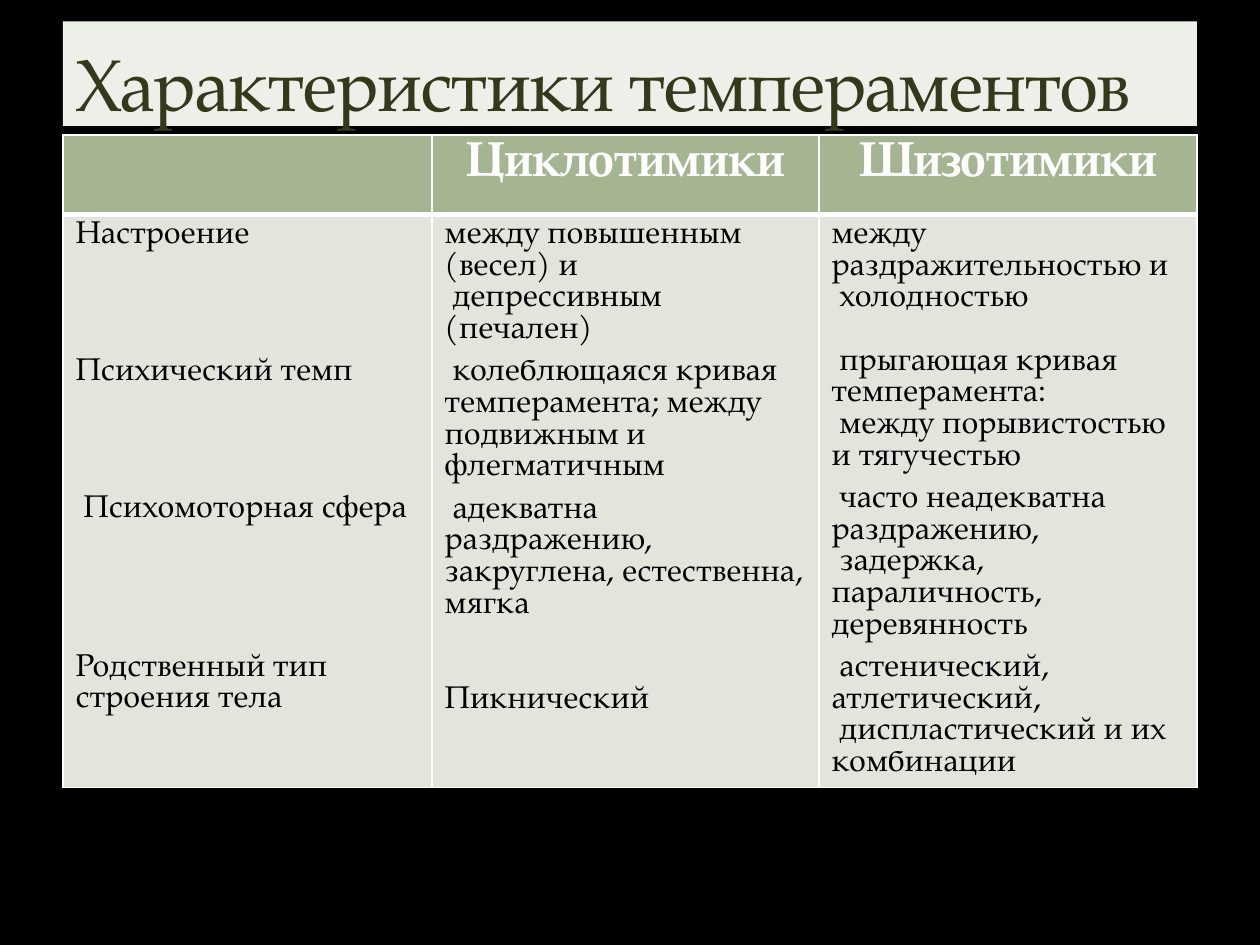
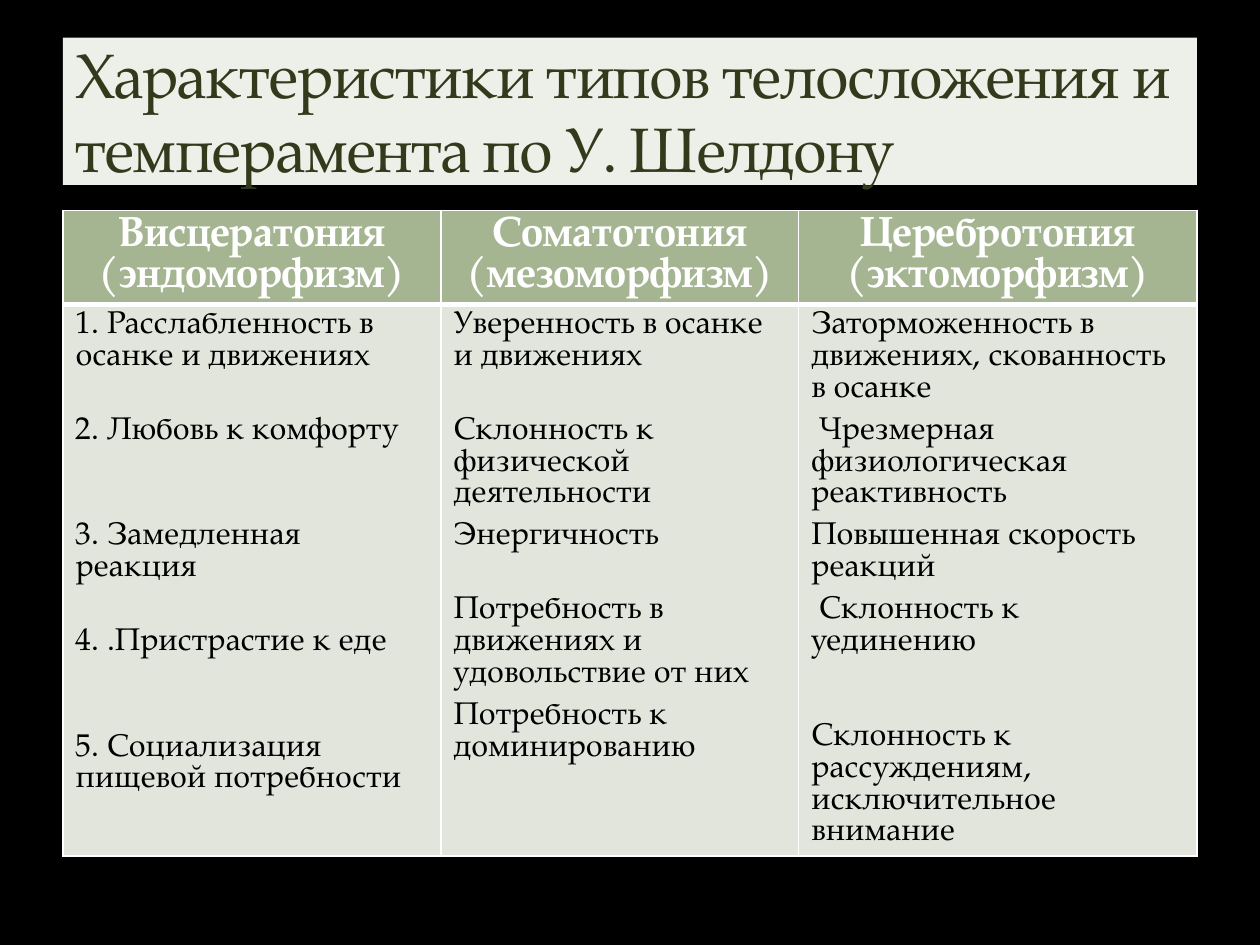
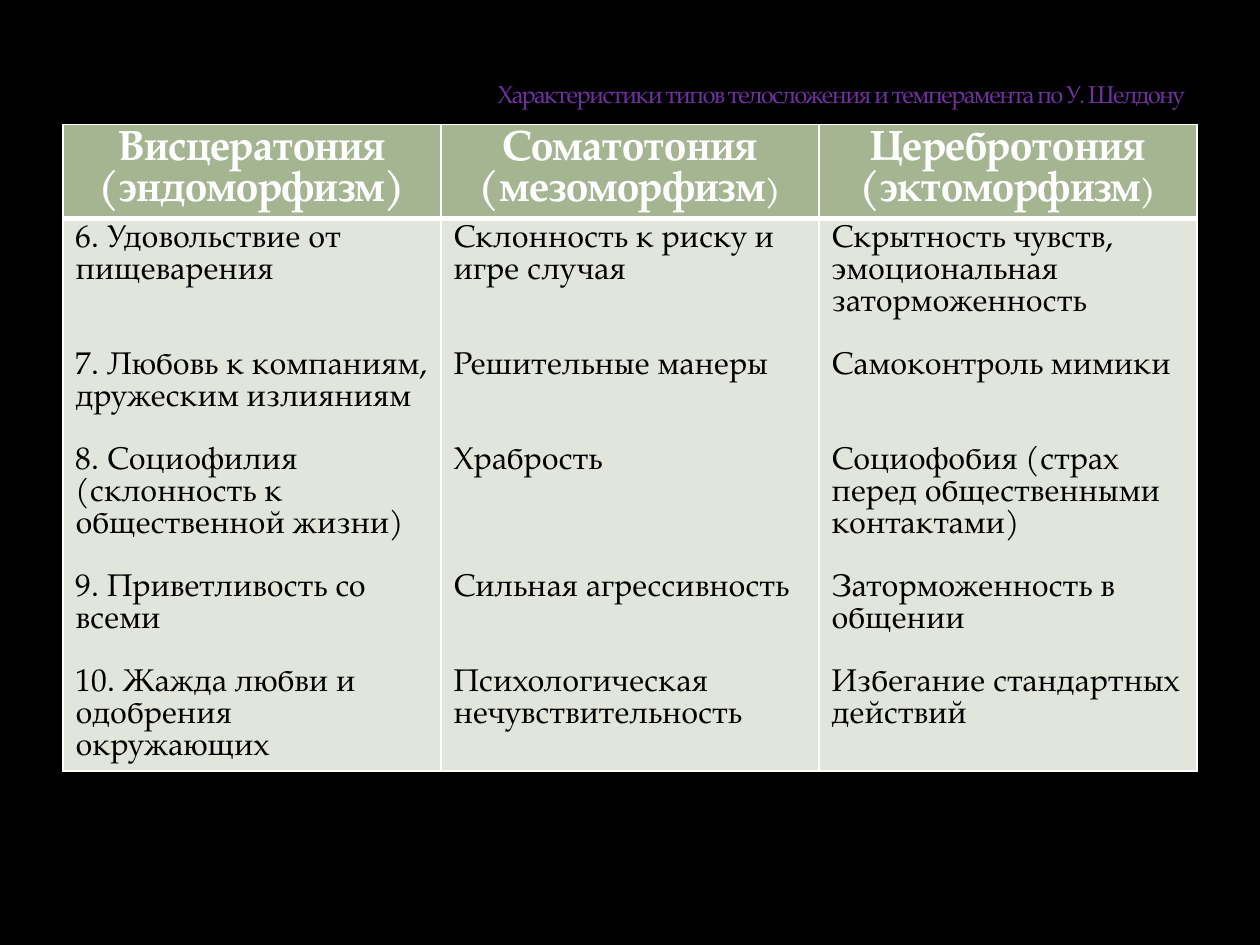
from dataclasses import dataclass

from lxml.etree import SubElement
from pptx import Presentation
from pptx.dml.color import RGBColor
from pptx.enum.shapes import MSO_SHAPE
from pptx.enum.text import MSO_ANCHOR, PP_ALIGN
from pptx.oxml.ns import qn
from pptx.util import Cm, Pt


@dataclass(frozen=True)
class Theme:
    font: str = "TeX Gyre Pagella"
    background: str = "000000"
    title_band: str = "EDF0E9"
    title_text: str = "333A1C"
    small_title_text: str = "7030A0"
    header_fill: str = "A5B592"
    body_fill: str = "E1E5DC"
    white: str = "FFFFFF"
    body_text: str = "000000"
    left: float = 1.27
    width: float = 22.86
    body_size: int = 18
    body_leading: float = 18.1
    item_gap: int = 6
    header_leading: float = 0.97  # share of the header type size
    thin_line: int = 1
    thick_line: int = 3


SHELDON_TITLE = "Характеристики типов телосложения и темперамента по У. Шелдону"

# Body items are (text, empty lines above, extra item gaps above).
TEMPERAMENTS = [
    [("Настроение", 0, 0), ("Психический темп", 3, 1), (" Психомоторная сфера", 3, 1),
     ("Родственный тип строения тела", 4, 0)],
    [("между повышенным (весел) и", 0, 0), (" депрессивным (печален)", 0, 0),
     (" колеблющаяся кривая темперамента; между подвижным и флегматичным", 0, 1),
     (" адекватна раздражению, закруглена, естественна, мягка", 0, 1),
     ("Пикнический", 2, 0)],
    [("между раздражительностью и", 0, 0), (" холодностью", 0, 0),
     (" прыгающая кривая темперамента:", 1, 0),
     (" между порывистостью и тягучестью", 0, 0),
     (" часто неадекватна раздражению,", 0, 1),
     (" задержка, параличность, деревянность", 0, 0),
     (" астенический, атлетический,", 0, 1),
     (" диспластический и их комбинации", 0, 0)],
]
BODY_TYPES_START = [
    [("1. Расслабленность в осанке и движениях", 0, 0), ("2. Любовь к комфорту", 1, 1),
     ("3. Замедленная реакция", 2, 1), ("4. .Пристрастие к еде", 1, 1),
     ("5. Социализация пищевой потребности", 2, 1)],
    [("Уверенность в осанке и движениях", 0, 0),
     ("Склонность к физической деятельности", 1, 1), ("Энергичность", 0, 1),
     ("Потребность в движениях и удовольствие от них", 1, 1),
     ("Потребность к доминированию", 0, 1)],
    [("Заторможенность в движениях, скованность в осанке", 0, 0),
     (" Чрезмерная физиологическая реактивность", 0, 1),
     ("Повышенная скорость реакций", 0, 1), (" Склонность к уединению", 0, 1),
     ("Склонность к рассуждениям, исключительное внимание", 2, 0)],
]
BODY_TYPES_END = [
    [("6. Удовольствие от пищеварения", 0, 0),
     ("7. Любовь к компаниям, дружеским излияниям", 2, 0),
     ("8. Социофилия (склонность к общественной жизни)", 1, 0),
     ("9. Приветливость со всеми", 1, 0),
     ("10. Жажда любви и одобрения окружающих", 1, 0)],
    [("Склонность к риску и игре случая", 0, 0), ("Решительные манеры", 2, 0),
     ("Храбрость", 2, 0), ("Сильная агрессивность", 3, 0),
     ("Психологическая нечувствительность", 2, 0)],
    [("Скрытность чувств, эмоциональная заторможенность", 0, 0),
     ("Самоконтроль мимики", 1, 0),
     ("Социофобия (страх перед общественными контактами)", 2, 0),
     ("Заторможенность в общении", 1, 0), ("Избегание стандартных действий", 1, 0)],
]


class Deck:
    def __init__(self, theme):
        self.theme = theme
        self.presentation = Presentation()
        self.presentation.slide_width = Cm(25.4)
        self.presentation.slide_height = Cm(19.05)
        self.slide = None

    def add_slide(self):
        self.slide = self.presentation.slides.add_slide(self.presentation.slide_layouts[6])
        fill = self.slide.background.fill
        fill.solid()
        fill.fore_color.rgb = RGBColor.from_string(self.theme.background)

    def add_run(self, paragraph, text, size, color, bold=False):
        run = paragraph.add_run()
        run.text = text
        run.font.name = self.theme.font
        run.font.size = Pt(size)
        run.font.bold = bold
        run.font.color.rgb = RGBColor.from_string(color)
        return run

    def write_title(self, shape, text, size, color, align, inset, leading=None):
        frame = shape.text_frame
        frame.word_wrap = True
        frame.vertical_anchor = MSO_ANCHOR.BOTTOM
        frame.margin_left = frame.margin_right = Cm(0.25)
        frame.margin_top = frame.margin_bottom = Cm(inset)
        paragraph = frame.paragraphs[0]
        paragraph.alignment = align
        if leading:
            paragraph.line_spacing = Pt(leading)
        run = self.add_run(paragraph, text, size, color)
        run._r.get_or_add_rPr().set("spc", "-100")

    def add_title_band(self, text, top, height, size, leading=None):
        theme = self.theme
        band = self.slide.shapes.add_shape(
            MSO_SHAPE.RECTANGLE, Cm(theme.left), Cm(top), Cm(theme.width), Cm(height))
        band.shadow.inherit = False
        band.fill.solid()
        band.fill.fore_color.rgb = RGBColor.from_string(theme.title_band)
        band.line.fill.background()
        self.write_title(band, text, size, theme.title_text, PP_ALIGN.LEFT, 0, leading)

    def add_small_title(self, text, top, height, size):
        theme = self.theme
        box = self.slide.shapes.add_textbox(
            Cm(theme.left), Cm(top), Cm(theme.width), Cm(height))
        self.write_title(box, text, size, theme.small_title_text, PP_ALIGN.RIGHT, 0.13)

    def style_cell(self, cell, fill, bottom, top):
        """Set borders first: the schema wants them ahead of the fill."""
        properties = cell._tc.get_or_add_tcPr()
        thin = self.theme.thin_line
        for side, width in (("L", thin), ("R", thin), ("T", top), ("B", bottom)):
            line = SubElement(properties, qn(f"a:ln{side}"), w=str(Pt(width)))
            solid = SubElement(line, qn("a:solidFill"))
            SubElement(solid, qn("a:srgbClr"), val=self.theme.white)
        cell.fill.solid()
        cell.fill.fore_color.rgb = RGBColor.from_string(fill)

    def write_header(self, cell, runs):
        paragraph = cell.text_frame.paragraphs[0]
        paragraph.alignment = PP_ALIGN.CENTER
        if runs:
            paragraph.line_spacing = Pt(runs[0][1] * self.theme.header_leading)
        for text, size in runs:
            self.add_run(paragraph, text, size, self.theme.white, bold=True)

    def write_items(self, cell, items):
        theme = self.theme
        frame = cell.text_frame
        for index, (text, lines, gaps) in enumerate(items):
            paragraph = frame.add_paragraph() if index else frame.paragraphs[0]
            paragraph.line_spacing = Pt(theme.body_leading)
            paragraph.space_before = Pt(lines * theme.body_leading + gaps * theme.item_gap)
            self.add_run(paragraph, text, theme.body_size, theme.body_text)

    def add_comparison(self, top, widths, heights, headers, columns):
        theme = self.theme
        table = self.slide.shapes.add_table(
            2, len(widths), Cm(theme.left), Cm(top), Cm(theme.width), Cm(sum(heights))).table
        for row, height in zip(table.rows, heights):
            row.height = Cm(height)
        for index, (width, runs, items) in enumerate(zip(widths, headers, columns)):
            table.columns[index].width = Cm(width)
            header, body = table.cell(0, index), table.cell(1, index)
            self.style_cell(header, theme.header_fill, theme.thick_line, theme.thin_line)
            self.style_cell(body, theme.body_fill, theme.thin_line, theme.thick_line)
            self.write_header(header, runs)
            self.write_items(body, items)


def main():
    deck = Deck(Theme())

    deck.add_slide()
    deck.add_comparison(2.72, (7.44, 7.8, 7.62), (1.6, 11.56),
                        [[], [("Циклотимики", 28)], [("Шизотимики", 28)]], TEMPERAMENTS)
    deck.add_title_band("Характеристики темпераментов", 0.43, 2.11, 42)

    deck.add_slide()
    deck.add_comparison(4.24, (7.62, 7.21, 8.03), (1.9, 11.1),
                        [[("Висцератония (эндоморфизм)", 24)],
                         [("Соматотония (мезоморфизм)", 24)],
                         [("Церебротония (эктоморфизм)", 24)]], BODY_TYPES_START)
    deck.add_title_band(SHELDON_TITLE, 0.76, 2.97, 36, leading=42.3)

    deck.add_slide()
    deck.add_comparison(2.51, (7.62,) * 3, (1.9, 11.13),
                        [[("Висцератония (эндоморфизм)", 24)],
                         [("Соматотония (мезоморфизм", 24), (")", 18)],
                         [("Церебротония (эктоморфизм", 24), (")", 18)]], BODY_TYPES_END)
    deck.add_small_title(SHELDON_TITLE, 0.76, 1.55, 14)

    deck.presentation.save("out.pptx")


if __name__ == "__main__":
    main()
